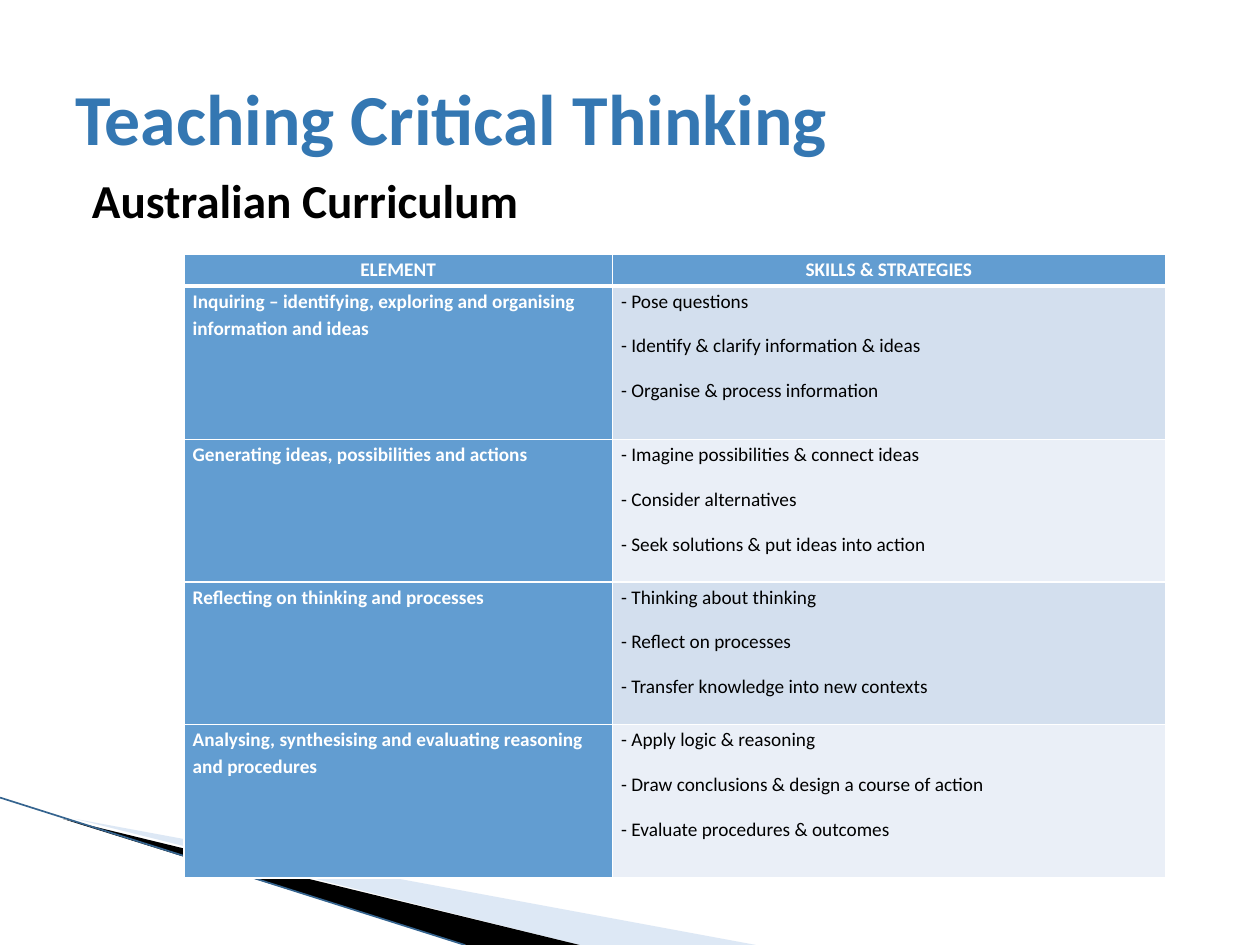
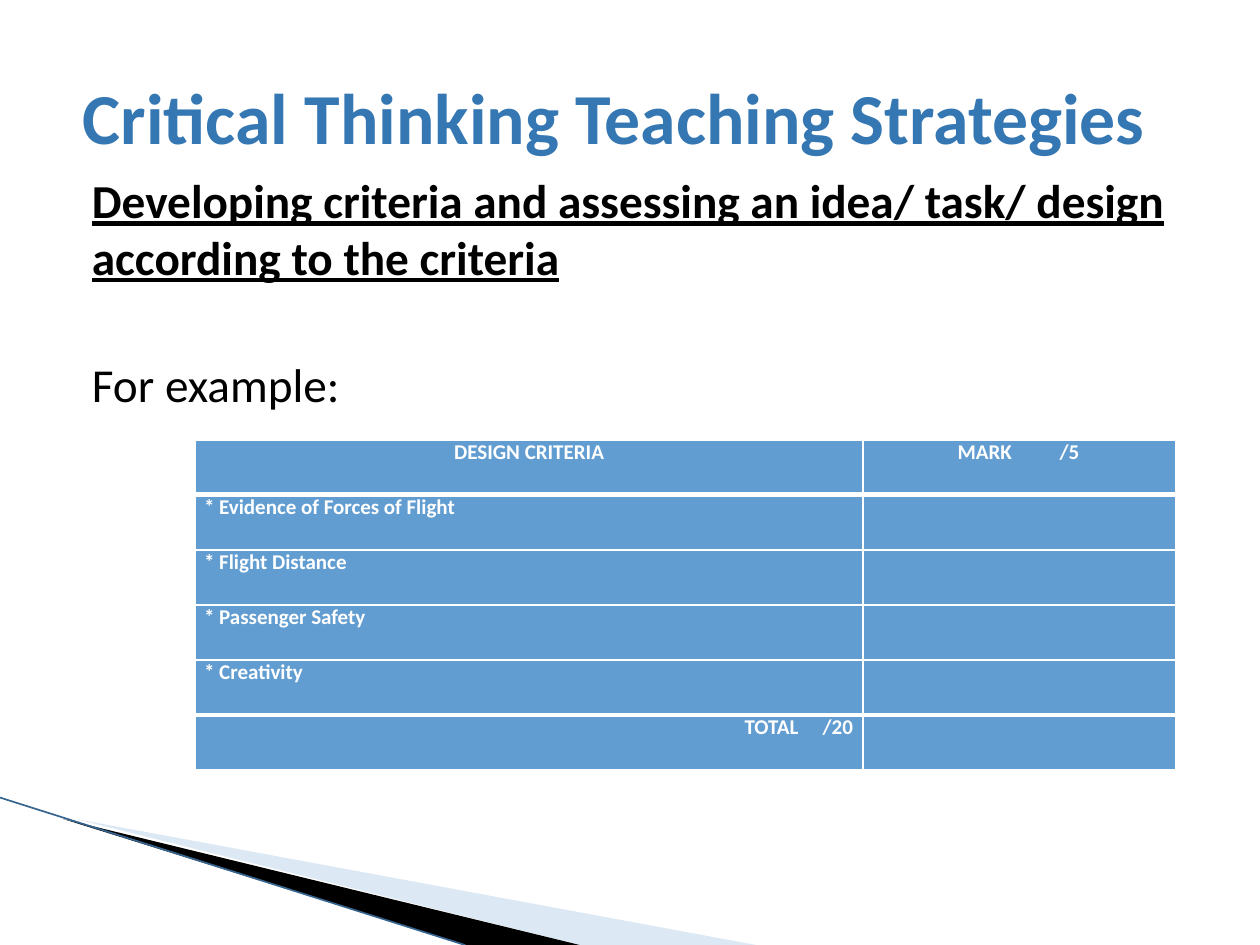
from lxml.etree import SubElement
from pptx import Presentation
from pptx.dml.color import RGBColor
from pptx.enum.shapes import MSO_CONNECTOR
from pptx.enum.text import MSO_ANCHOR, PP_ALIGN
from pptx.oxml.ns import qn
from pptx.util import Emu, Inches, Pt

COLUMNS, ROWS = 100, 75
UNIT = Inches(10) / COLUMNS  # grid squares: the slide is 100 columns by 75 rows
FONT = "Calibri"
COLOURS = {
    "title": "3477B2",
    "text": "000000",
    "white": "FFFFFF",
    "table": "629DD1",
    "band dark": "D3DFEE",
    "band light": "EAEFF7",
    "pale wedge": "ABC6E6",
    "black wedge": "000000",
    "edge": "35648F",
}
CURRICULUM = [
    ("Inquiring – identifying, exploring and organising information and ideas",
     ["Pose questions", "Identify & clarify information & ideas",
      "Organise & process information"]),
    ("Generating ideas, possibilities and actions",
     ["Imagine possibilities & connect ideas", "Consider alternatives",
      "Seek solutions & put ideas into action"]),
    ("Reflecting on thinking and processes",
     ["Thinking about thinking", "Reflect on processes",
      "Transfer knowledge into new contexts"]),
    ("Analysing, synthesising and evaluating reasoning and procedures",
     ["Apply logic & reasoning", "Draw conclusions & design a course of action",
      "Evaluate procedures & outcomes"]),
]
CRITERIA = ["Evidence of Forces of Flight", "Flight Distance",
            "Passenger Safety", "Creativity"]


def grid(squares):
    return Emu(round(squares * UNIT))


def colour(name):
    return RGBColor.from_string(COLOURS[name])


def add_run(paragraph, text, size, ink="text", bold=False, underline=False):
    run = paragraph.add_run()
    run.text = text
    font = run.font
    font.name, font.size = FONT, Pt(size)
    font.bold, font.underline = bold, underline
    font.color.rgb = colour(ink)


def add_text_area(slide, left, top, width, height, anchor=MSO_ANCHOR.TOP):
    area = slide.shapes.add_textbox(*map(grid, (left, top, width, height)))
    frame = area.text_frame
    frame.word_wrap = True
    frame.vertical_anchor = anchor
    return frame


def add_title(slide, text, left, top):
    frame = add_text_area(slide, left, top, 90, 12.5, MSO_ANCHOR.MIDDLE)
    add_run(frame.paragraphs[0], text, 41, "title", bold=True)


def add_body(slide):
    frame = add_text_area(slide, 5.1, 13.1, 90, 54.1)
    frame.margin_left = grid(2.2)
    return frame


def add_wedge(slide, points, fill, opacity=100):
    (start_x, start_y), *corners = points
    builder = slide.shapes.build_freeform(start_x, start_y, scale=UNIT)
    builder.add_line_segments(corners, close=True)
    wedge = builder.convert_to_shape()
    wedge.shadow.inherit = False
    wedge.line.fill.background()
    wedge.fill.solid()
    wedge.fill.fore_color.rgb = colour(fill)
    if opacity < 100:
        tint = wedge.fill._xPr.find(qn("a:solidFill"))[0]
        SubElement(tint, qn("a:alpha"), val=str(opacity * 1000))


def add_corner_wedges(slide):
    add_wedge(slide, [(5.5, 65.1), (59.5, ROWS), (45.6, ROWS), (5.5, 65)],
              "pale wedge", opacity=40)
    add_wedge(slide, [(5.3, 64.9), (45.7, ROWS), (37, ROWS), (5.4, 65)],
              "black wedge")
    edge = slide.shapes.add_connector(
        MSO_CONNECTOR.STRAIGHT, *map(grid, (0, 63.3, 36.9, ROWS)))
    edge.line.color.rgb = colour("edge")
    edge.line.width = Pt(0.95)
    SubElement(edge._element.spPr, qn("a:effectLst"))


def add_cell_borders(cell, top, bottom):
    properties = cell._tc.get_or_add_tcPr()
    for side, points in (("L", 1), ("R", 1), ("T", top), ("B", bottom)):
        border = SubElement(properties, qn(f"a:ln{side}"), w=str(Pt(points)))
        fill = SubElement(border, qn("a:solidFill"))
        SubElement(fill, qn("a:srgbClr"), val=COLOURS["white"])


def add_grid_table(slide, left, top, widths, heights, heavy_rules):
    """Add a blue table; heavy_rules numbers the row edges drawn thick."""
    table = slide.shapes.add_table(
        len(heights), len(widths),
        *map(grid, (left, top, sum(widths), sum(heights)))).table
    for column, width in zip(table.columns, widths):
        column.width = grid(width)
    for index, (row, height) in enumerate(zip(table.rows, heights)):
        row.height = grid(height)
        above, below = (3 if rule in heavy_rules else 1
                        for rule in (index, index + 1))
        for cell in row.cells:
            cell.margin_left = cell.margin_right = grid(0.7)
            cell.margin_top = cell.margin_bottom = 0
            add_cell_borders(cell, above, below)
            shade(cell, "table")
    return table


def shade(cell, fill):
    cell.fill.solid()
    cell.fill.fore_color.rgb = colour(fill)


def write_cell(cell, lines, size, ink="white", bold=True,
               align=PP_ALIGN.LEFT, spacing=1.0, stops=()):
    frame = cell.text_frame
    for index, line in enumerate(lines):
        paragraph = frame.add_paragraph() if index else frame.paragraphs[0]
        paragraph.alignment = align
        paragraph.line_spacing = spacing
        if index:
            paragraph.space_before = Pt(10)
        if stops:
            tabs = SubElement(paragraph._p.get_or_add_pPr(), qn("a:tabLst"))
            for stop in stops:
                SubElement(tabs, qn("a:tab"), pos=str(grid(stop)), algn="l")
        add_run(paragraph, line, size, ink, bold)


def add_curriculum_table(slide):
    table = add_grid_table(slide, 14.6, 20.2, [34, 43.9],
                           [2.5, 12.2, 11.3, 11.3, 12.2], heavy_rules={1})
    for column, heading in enumerate(["ELEMENT", "SKILLS & STRATEGIES"]):
        write_cell(table.cell(0, column), [heading], 11,
                   align=PP_ALIGN.CENTER, spacing=1.15)
    for row, (element, skills) in enumerate(CURRICULUM, 1):
        write_cell(table.cell(row, 0), [element], 11, spacing=1.15)
        skills_cell = table.cell(row, 1)
        shade(skills_cell, "band dark" if row % 2 else "band light")
        write_cell(skills_cell, [f"- {skill}" for skill in skills], 11,
                   ink="text", bold=False, spacing=1.15)


def add_criteria_table(slide):
    total_row = len(CRITERIA) + 1
    table = add_grid_table(slide, 15.5, 34.9, [53, 24.8],
                           [4.37] * (total_row + 1), heavy_rules={1, total_row})
    write_cell(table.cell(0, 0), ["DESIGN CRITERIA"], 12, align=PP_ALIGN.CENTER)
    write_cell(table.cell(0, 1), ["\tMARK\t/5"], 12, stops=(6.8, 14.9))
    for row, criterion in enumerate(CRITERIA, 1):
        write_cell(table.cell(row, 0), [f"* {criterion}"], 12)
    write_cell(table.cell(total_row, 0), ["\tTOTAL\t/20"], 12, stops=(42.9, 49.1))


def add_slide(deck):
    slide = deck.slides.add_slide(deck.slide_layouts[6])
    add_corner_wedges(slide)
    return slide


def build_curriculum_slide(deck):
    slide = add_slide(deck)
    add_run(add_body(slide).paragraphs[0], "Australian Curriculum", 27, bold=True)
    add_title(slide, "Teaching Critical Thinking", 5, 3)
    add_curriculum_table(slide)


def build_strategies_slide(deck):
    slide = add_slide(deck)
    body = add_body(slide)
    add_run(body.paragraphs[0],
            "Developing criteria and assessing an idea/ task/ design "
            "according to the criteria", 27, bold=True, underline=True)
    example = body.add_paragraph()
    example.space_before = Pt(40)
    add_run(example, "For example:", 27)
    add_title(slide, "Critical Thinking Teaching Strategies", 5.6, 2.9)
    add_criteria_table(slide)


def main():
    deck = Presentation()
    deck.slide_width, deck.slide_height = grid(COLUMNS), grid(ROWS)
    build_curriculum_slide(deck)
    build_strategies_slide(deck)
    deck.save("out.pptx")


if __name__ == "__main__":
    main()
